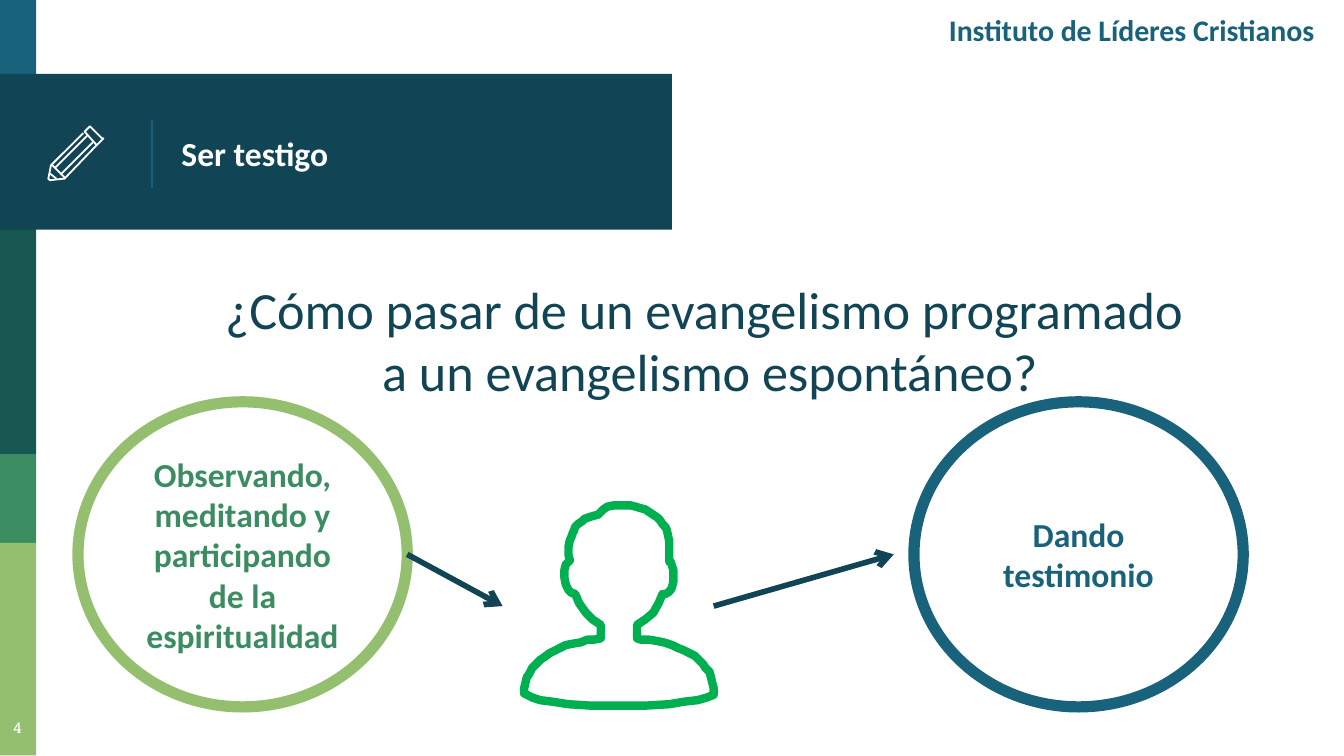
from pptx import Presentation
from pptx.util import Inches, Pt
from pptx.dml.color import RGBColor
from pptx.enum.shapes import MSO_SHAPE as Shape, MSO_CONNECTOR as Link
from pptx.enum.text import PP_ALIGN as Align, MSO_ANCHOR as Anchor
from pptx.oxml.ns import qn
from lxml.etree import SubElement

WHITE, NAVY, BLUE = "FFFFFF", "114454", "18637B"
PINE, GREEN, LIME, VIVID = "165751", "3B8D61", "94BF6E", "00B050"

# Outlines in hundredths of an inch from the top left of their icon
PENCIL = [
    [(40, 9), (32, 1), (31, 0), (30, 1), (27, 4), (36, 14), (40, 10), (41, 9), (40, 9)],
    [(33, 12), (9, 36)],
    [(26, 5), (2, 29), (0, 39), (1, 40), (2, 40), (11, 39), (12, 39), (36, 14)],
    [(5, 31), (29, 7)],
    [(6, 39), (1, 35)],
    [(2, 29), (3, 29), (12, 38), (12, 39)],
]
PERSON = [
    # right side of the neck, ear and hair
    (87, 100), (84, 99), (84, 89), (90, 85), (96, 80), (100, 73), (103, 66),
    (105, 66), (107, 65), (109, 63), (110, 61), (111, 57), (111, 54), (111, 48),
    (110, 45), (109, 42), (108, 42), (108, 35), (108, 27), (107, 22), (106, 18),
    (105, 16), (103, 14), (101, 11), (99, 9), (96, 7), (93, 5), (90, 3), (86, 2),
    (83, 1), (79, 0), (71, 0), (67, 0), (62, 1), (59, 3), (57, 5), (55, 7),
    # left side of the hair, ear and neck
    (51, 8), (48, 9), (45, 10), (43, 12), (40, 14), (38, 16), (37, 19), (36, 21),
    (35, 24), (34, 26), (33, 31), (33, 37), (34, 41), (33, 42), (31, 44),
    (30, 48), (30, 54), (31, 59), (33, 63), (35, 65), (38, 66), (41, 73),
    (46, 80), (51, 85), (57, 89), (57, 99),
    # shoulders and base
    (52, 100), (47, 100), (42, 102), (36, 103), (31, 104), (27, 106), (23, 108),
    (19, 110), (15, 113), (12, 115), (9, 118), (6, 121), (4, 125), (2, 128),
    (1, 132), (0, 136), (0, 140), (2, 141), (6, 143), (12, 145), (20, 146),
    (33, 148), (49, 149), (70, 149), (91, 149), (108, 148), (120, 146),
    (129, 145), (136, 143), (141, 141), (141, 140), (141, 136), (140, 132),
    (139, 128), (138, 124), (135, 121), (133, 118), (130, 115), (127, 112),
    (123, 110), (119, 108), (114, 106), (110, 104), (104, 102), (99, 101),
    (93, 100), (87, 100),
]


def color(code):
    return RGBColor.from_string(code)


def stroke(item, code, width):
    item.line.color.rgb = color(code)
    item.line.width = Pt(width)


def write(frame, text, size, code, bold=False, align=Align.LEFT,
          anchor=Anchor.TOP, font="Calibri"):
    frame.word_wrap = True
    frame.vertical_anchor = anchor
    frame.margin_left = frame.margin_right = Inches(0.1)
    frame.margin_top = frame.margin_bottom = Inches(0.1)
    para = frame.paragraphs[0]
    para.text = text
    para.alignment = align
    for run in para.runs:
        run.font.name, run.font.size, run.font.bold = font, Pt(size), bold
        run.font.color.rgb = color(code)


def label(slide, box, text, size, code, **style):
    frame = slide.shapes.add_textbox(*map(Inches, box)).text_frame
    write(frame, text, size, code, **style)
    return frame


def block(slide, box, code):
    rect = slide.shapes.add_shape(Shape.RECTANGLE, *map(Inches, box))
    rect.shadow.inherit = False
    rect.fill.solid()
    rect.fill.fore_color.rgb = color(code)
    rect.line.fill.background()


def line(slide, start, end, code, width, arrow=False):
    link = slide.shapes.add_connector(Link.STRAIGHT, *map(Inches, start + end))
    stroke(link, code, width)
    props = link._element.spPr
    if arrow:
        SubElement(props.find(qn("a:ln")), qn("a:tailEnd"), type="arrow")
    SubElement(props, qn("a:effectLst"))


def outline(slide, left, top, points, code, width):
    pen = slide.shapes.build_freeform(*points[0], scale=Inches(0.01))
    closed = points[0] == points[-1]
    pen.add_line_segments(points[1:-1] if closed else points[1:], close=closed)
    form = pen.convert_to_shape(Inches(left), Inches(top))
    form.shadow.inherit = False
    form.fill.background()
    stroke(form, code, width)
    SubElement(form._element.spPr.find(qn("a:ln")), qn("a:round"))


def ring(slide, box, text, edge, ink):
    oval = slide.shapes.add_shape(Shape.OVAL, *map(Inches, box))
    oval.shadow.inherit = False
    oval.fill.background()
    stroke(oval, edge, 6)
    write(oval.text_frame, text, 18, ink, True, Align.CENTER, Anchor.MIDDLE)


def sidebar(slide, left, top, width, height):
    stops = [(0, BLUE), (0.55, NAVY), (1.7, PINE), (3.38, GREEN), (4.04, LIME)]
    ends = [stop for stop, _ in stops[1:]] + [height]
    for (start, code), end in zip(stops, ends):
        block(slide, (left, top + start, width, end - start), code)
    frame = label(slide, (left - 0.06, top + 5.27, 0.38, 0.35), "4", 8, WHITE,
                  align=Align.CENTER, font="Roboto Slab")
    frame.margin_top = Inches(0.12)


def banner(slide, left, top, width, height):
    block(slide, (left, top, width, height), NAVY)
    line(slide, (left + 1.13, top + 0.34), (left + 1.13, top + 0.85), BLUE, 0.75)
    title = slide.shapes.title
    title.left, title.top = Inches(left + 1.25), Inches(top + 0.03)
    title.width, title.height = Inches(width - 1.25), Inches(1.12)
    write(title.text_frame, "Ser testigo", 18, WHITE, True, anchor=Anchor.MIDDLE)
    # Bring the title in front of the band
    slide.shapes._spTree.append(title._element)
    for points in PENCIL:
        outline(slide, left + 0.36, top + 0.39, points, WHITE, 0.96)


def header(slide, box):
    frame = label(slide, box, "Instituto de Líderes Cristianos", 16, BLUE,
                  bold=True, align=Align.RIGHT)
    frame.margin_top = Inches(0.03)


def question(slide, box):
    frame = label(slide, box, "¿Cómo pasar de un evangelismo programado \v"
                  "a un evangelismo espontáneo?", 28, NAVY, align=Align.CENTER)
    frame.margin_left = Inches(0.16)


def diagram(slide, left, top, width, height):
    size = 2.45
    mid, low = top + height / 2, top + 1.52
    ring(slide, (left, top, size, height),
         "Observando, meditando y participando de la espiritualidad", LIME, GREEN)
    ring(slide, (left + width - size, top, size, height),
         "Dando testimonio", BLUE, BLUE)
    outline(slide, left + 3.32, top + 0.77, PERSON, VIVID, 4.5)
    line(slide, (left + size, mid), (left + 3.16, low), NAVY, 3, True)
    line(slide, (left + 4.73, low), (left + 6.07, mid), NAVY, 3, True)


def main():
    deck = Presentation()
    deck.slide_width = Inches(10)
    deck.slide_height = deck.slide_width * 9 // 16
    slide = deck.slides.add_slide(deck.slide_layouts[5])
    sidebar(slide, 0, 0, 0.27, 5.62)
    banner(slide, 0, 0.55, 5, 1.16)
    header(slide, (6.18, 0.06, 3.7, 0.61))
    question(slide, (0.77, 1.96, 8.96, 3.45))
    diagram(slide, 0.58, 2.99, 8.67, 2.27)
    deck.save("out.pptx")


if __name__ == "__main__":
    main()
